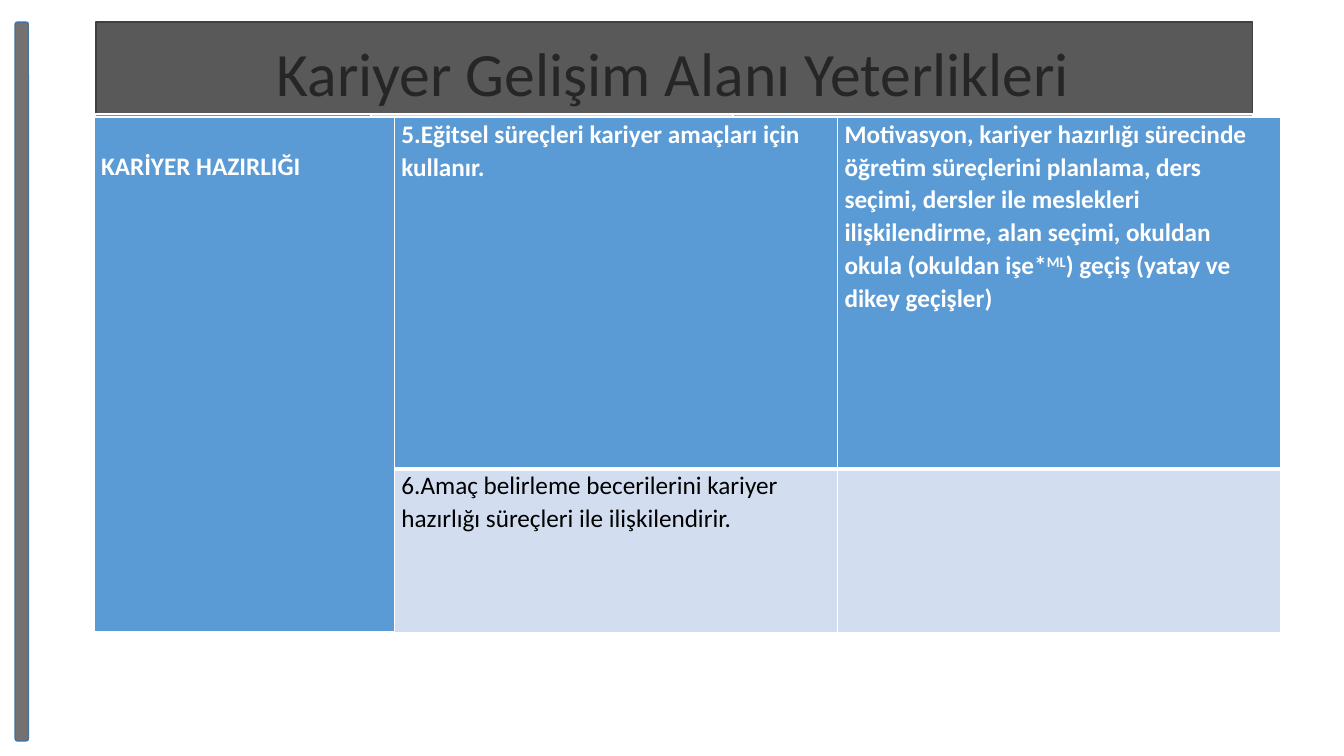
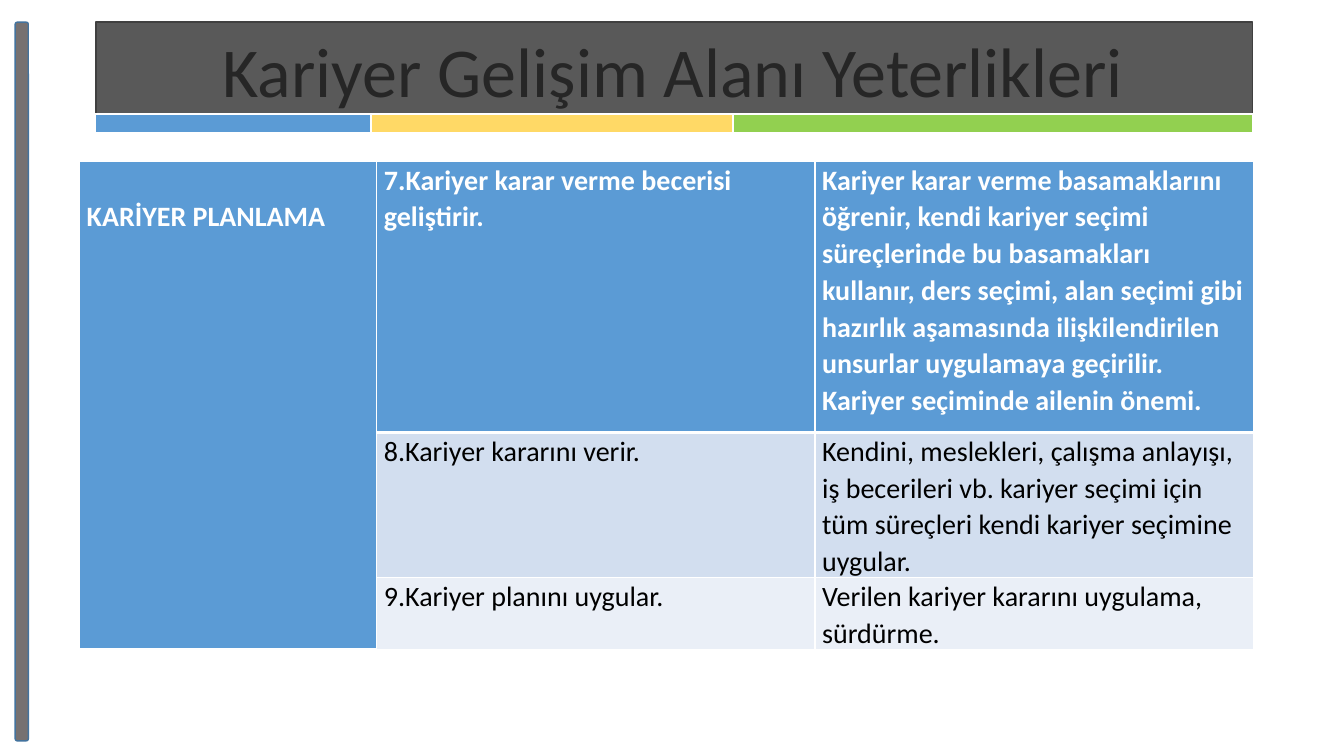
from collections import namedtuple

from lxml import etree
from pptx import Presentation, util as u
from pptx.dml.color import RGBColor
from pptx.enum import shapes, text
from pptx.oxml import ns

COLORS = {
    "white": "FFFFFF", "black": "000000", "band": "595959", "band_edge": "404040",
    "title": "262626", "rail": "767171", "rail_edge": "43739E",
    "blue": "5B9BD5", "yellow": "FFD966", "green": "92D050",
    "tint": "D2DEEF", "pale": "EAEFF7",
}
FONT = "Calibri"
TITLE = "Kariyer Gelişim Alanı Yeterlikleri"
SLIDE_WIDTH, SLIDE_HEIGHT = u.Inches(13.33), u.Inches(7.5)
LINE_FACTOR = 1.3

Box = namedtuple("Box", "left top width height")


def rgb(name):
    """Return the named colour."""
    return RGBColor.from_string(COLORS[name])


def share(left, top, width, height):
    """Turn percentages of the slide into a box."""
    return Box(*(int(part * side / 100) for part, side in zip(
        (left, top, width, height), (SLIDE_WIDTH, SLIDE_HEIGHT) * 2)))


BAND = share(7.13, 2.93, 86.05, 12.53)
STRIPE = share(7.13, 15.07, 86.05, 2.67)
RAIL = share(1.13, 2.93, 0.98, 95.07)
HEADING = share(2.63, 4.93, 94.97, 10.53)


def style_font(font, size, color, bold=False):
    """Apply the deck typeface with a size and colour."""
    font.name, font.size, font.bold = FONT, u.Pt(size), bold
    font.color.rgb = rgb(color)


def add_panel(slide, kind, box, fill, edge):
    """Draw a flat outlined shape."""
    panel = slide.shapes.add_shape(kind, *box)
    panel.shadow.inherit = False
    panel.fill.solid()
    panel.fill.fore_color.rgb = rgb(fill)
    panel.line.color.rgb = rgb(edge)
    panel.line.width = u.Pt(1)


def paint_cell(cell, fill, bottom=1):
    """Give a cell white borders, a fill and narrow margins."""
    properties = cell._tc.get_or_add_tcPr()
    for side, width in zip("LRTB", (1, 1, 1, bottom)):
        border = etree.SubElement(properties, ns.qn(f"a:ln{side}"), w=str(u.Pt(width)))
        solid = etree.SubElement(border, ns.qn("a:solidFill"))
        etree.SubElement(solid, ns.qn("a:srgbClr"), val=COLORS["white"])
    cell.fill.solid()
    cell.fill.fore_color.rgb = rgb(fill)
    cell.margin_left = cell.margin_right = u.Inches(0.07)
    cell.margin_top = cell.margin_bottom = 0


def add_grid(slide, box, columns, rows):
    """Add an unbanded table whose tracks share the box by weight."""
    grid = slide.shapes.add_table(len(rows), len(columns), *box).table
    grid.first_row = grid.horz_banding = False
    for column, weight in zip(grid.columns, columns):
        column.width = int(box.width * weight / sum(columns))
    for row, weight in zip(grid.rows, rows):
        row.height = int(box.height * weight / sum(rows))
    return grid


def add_frame(slide, title_size, title_spacing):
    """Draw the title band, colour stripe, side rail and title."""
    add_panel(slide, shapes.MSO_SHAPE.RECTANGLE, BAND, "band", "band_edge")
    stripe = add_grid(slide, STRIPE, (2.73, 3.59, 5.15), (1,))
    for cell, fill in zip(stripe.rows[0].cells, ("blue", "yellow", "green")):
        paint_cell(cell, fill, bottom=3)
        cell.text_frame.paragraphs[0]._p.get_or_add_endParaRPr().set("sz", "600")
    add_panel(slide, shapes.MSO_SHAPE.ROUNDED_RECTANGLE, RAIL, "rail", "rail_edge")

    frame = slide.shapes.add_textbox(*HEADING).text_frame
    frame.word_wrap = True
    frame.vertical_anchor = text.MSO_ANCHOR.MIDDLE
    heading = frame.paragraphs[0]
    heading.text = TITLE
    heading.alignment = text.PP_ALIGN.CENTER
    heading.line_spacing = title_spacing
    style_font(heading.font, title_size, "title")


def write_cell(cell, content, size, color, bold):
    """Write text parts, raising every second one."""
    paragraph = cell.text_frame.paragraphs[0]
    paragraph.line_spacing = 1.07
    style_font(paragraph.font, size, color, bold)
    for index, part in enumerate(content):
        run = paragraph.add_run()
        run.text = part
        if index % 2:
            run._r.get_or_add_rPr().set("baseline", "30000")


def add_competencies(slide, box, columns, rows, size, area, entries):
    """Tabulate an area's competencies beside its merged name cell."""
    grid = add_grid(slide, box, columns, rows)
    area_cell = grid.cell(0, 0)
    area_cell.merge(grid.cell(len(rows) - 1, 0))
    for row in range(len(rows)):
        paint_cell(grid.cell(row, 0), "blue", bottom=3)
    area_cell.margin_top = u.Pt(size * LINE_FACTOR)
    write_cell(area_cell, (area,), size, "white", True)
    for row, (entry, fill) in enumerate(zip(entries, ("blue", "tint", "pale"))):
        lead = row == 0
        for column, content in enumerate(entry, 1):
            cell = grid.cell(row, column)
            paint_cell(cell, fill, bottom=3 if lead else 1)
            write_cell(cell, content, size, "white" if lead else "black", lead)


PREPARATION = (
    (("5.Eğitsel süreçleri kariyer amaçları için kullanır.",),
     ("Motivasyon, kariyer hazırlığı sürecinde öğretim süreçlerini planlama, ders "
      "seçimi, dersler ile meslekleri ilişkilendirme, alan seçimi, okuldan okula "
      "(okuldan işe*", "ML", ") geçiş (yatay ve dikey geçişler)")),
    (("6.Amaç belirleme becerilerini kariyer hazırlığı süreçleri ile ilişkilendirir.",),
     ()),
)
PLANNING = (
    (("7.Kariyer karar verme becerisi geliştirir.",),
     ("Kariyer karar verme basamaklarını öğrenir, kendi kariyer seçimi süreçlerinde "
      "bu basamakları kullanır, ders seçimi, alan seçimi gibi hazırlık aşamasında "
      "ilişkilendirilen unsurlar uygulamaya geçirilir. Kariyer seçiminde ailenin "
      "önemi.",)),
    (("8.Kariyer kararını verir.",),
     ("Kendini, meslekleri, çalışma anlayışı, iş becerileri vb. kariyer seçimi için "
      "tüm süreçleri kendi kariyer seçimine uygular.",)),
    (("9.Kariyer planını uygular.",),
     ("Verilen kariyer kararını uygulama, sürdürme.",)),
)


def main():
    """Build and save both slides."""
    deck = Presentation()
    deck.slide_width, deck.slide_height = SLIDE_WIDTH, SLIDE_HEIGHT
    blank = deck.slide_layouts[6]

    preparation = deck.slides.add_slide(blank)
    add_frame(preparation, 44, 0.9)
    add_competencies(preparation, share(7, 15.47, 88.3, 68.27), (2.98, 4.4, 4.4),
                     (3.49, 1.63), 18, "KARİYER HAZIRLIĞI", PREPARATION)

    planning = deck.slides.add_slide(blank)
    add_frame(planning, 50, 0.8)
    add_competencies(planning, share(5.93, 21.33, 87.32, 64.67), (2.95, 4.35, 4.35),
                     (2.69, 1.44, 0.72), 20, "KARİYER PLANLAMA", PLANNING)

    deck.save("out.pptx")


if __name__ == "__main__":
    main()
